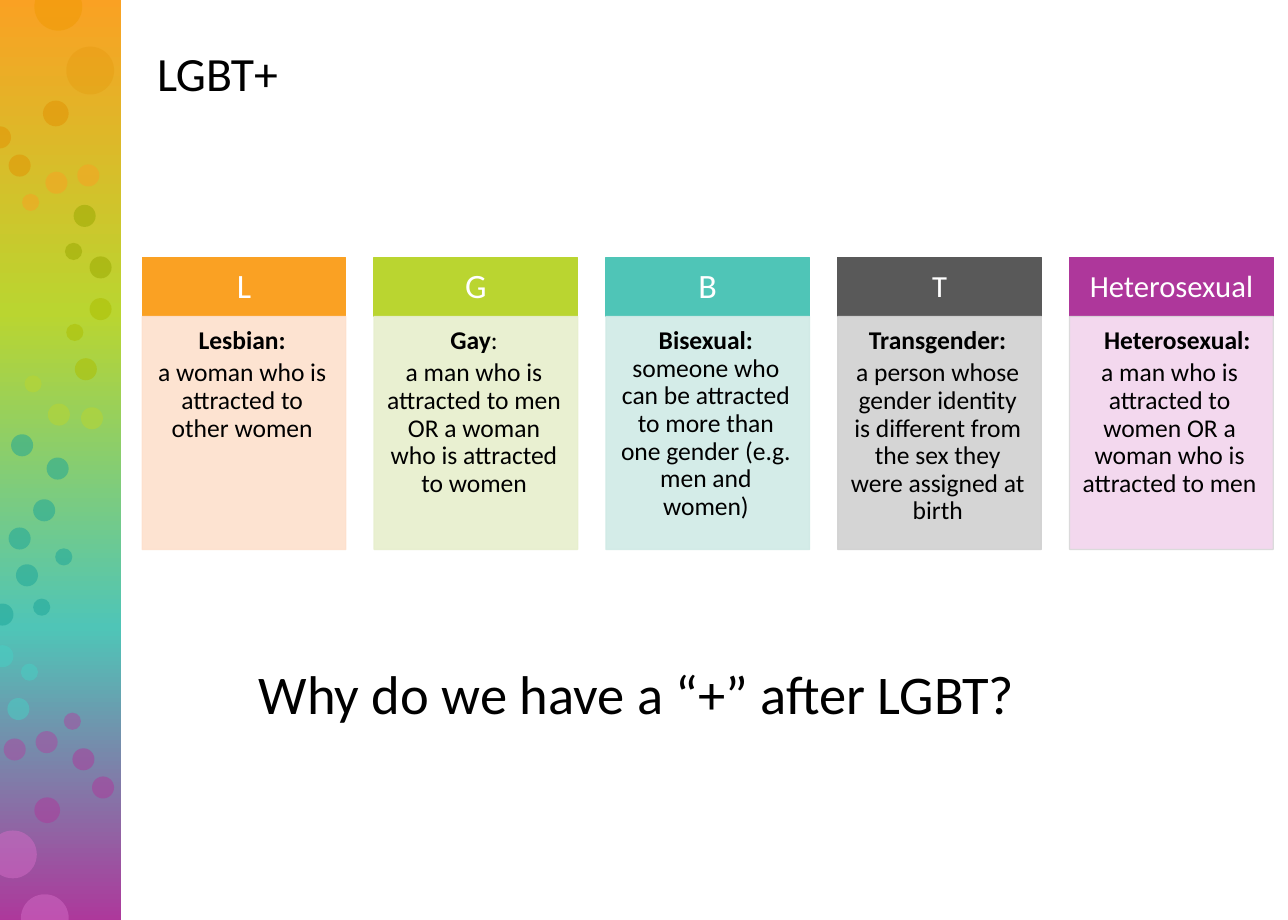
from copy import deepcopy

from lxml.etree import SubElement
from pptx import Presentation
from pptx.dml.color import RGBColor
from pptx.enum.shapes import MSO_SHAPE
from pptx.enum.text import MSO_ANCHOR, PP_ALIGN
from pptx.oxml.ns import qn
from pptx.util import Pt

BLACK = RGBColor(0x00, 0x00, 0x00)
WHITE = RGBColor(0xFF, 0xFF, 0xFF)
ORANGE = RGBColor(0xFA, 0xA1, 0x23)
AMBER = RGBColor(0xEF, 0x9A, 0x02)
OCHRE = RGBColor(0xE2, 0x91, 0x02)
LIME = RGBColor(0xBA, 0xD5, 0x30)
OLIVE = RGBColor(0x97, 0xA7, 0x00)
MOSS = RGBColor(0xAC, 0xBD, 0x00)
TEAL = RGBColor(0x4F, 0xC5, 0xB7)
PINE = RGBColor(0x1B, 0xA4, 0x98)
AQUA = RGBColor(0x47, 0xD0, 0xC4)
GREY = RGBColor(0x59, 0x59, 0x59)
PURPLE = RGBColor(0xAE, 0x37, 0x9B)
PLUM = RGBColor(0xAC, 0x46, 0xA0)
PINK = RGBColor(0xD2, 0x6C, 0xC6)
PEACH = RGBColor(0xFD, 0xE0, 0xCD)
PALE_LIME = RGBColor(0xE7, 0xEF, 0xCD)
PALE_TEAL = RGBColor(0xD0, 0xEA, 0xE6)
PALE_GREY = RGBColor(0xD1, 0xD1, 0xD1)
PALE_PINK = RGBColor(0xF2, 0xD4, 0xED)
EDGE = RGBColor(0xD8, 0xD8, 0xD8)

BAND = [(0, ORANGE), (0.34, LIME), (0.68, TEAL), (1, PURPLE)]

DOTS = [
    (AMBER, 50, [(28, -14, 39)]),
    (OCHRE, 25, [(54, 38, 39)]),
    (OCHRE, 50, [(35, 82, 21), (-9, 103, 18), (7, 126, 18)]),
    (ORANGE, 50, [(37, 140, 18), (63, 134, 18), (18, 158, 14)]),
    (OLIVE, 50, [(60, 167, 18), (73, 209, 18), (53, 198, 14)]),
    (MOSS, 50, [(54, 264, 14), (73, 243, 18), (61, 292, 18)]),
    (LIME, 50, [(66, 332, 18), (20, 306, 14), (39, 329, 18)]),
    (PINE, 50, [(9, 354, 18), (38, 373, 18), (27, 407, 18), (45, 447, 14),
                (7, 430, 18), (13, 460, 18), (-7, 492, 18), (27, 488, 14)]),
    (AQUA, 50, [(17, 541, 14), (-7, 526, 18), (6, 569, 18)]),
    (PLUM, 50, [(52, 581, 14), (3, 602, 18), (29, 596, 18)]),
    (PURPLE, 50, [(59, 610, 18), (75, 633, 18), (28, 650, 21)]),
    (PINK, 50, [(-9, 677, 39), (17, 729, 39)]),
]

CARDS = [
    ("L", 20, ORANGE, PEACH, PEACH,
     [["Lesbian:"], ["a woman who is attracted to other women"]]),
    ("G", 20, LIME, PALE_LIME, PALE_LIME,
     [["Gay", ":"],
      ["a man who is attracted to men OR a woman who is attracted to women"]]),
    ("B", 20, TEAL, PALE_TEAL, PALE_TEAL,
     [["Bisexual: ", "someone who can be attracted to more than one gender "
       "(e.g. men and women)"]]),
    ("T", 18, GREY, PALE_GREY, PALE_GREY,
     [["Transgender:"], ["a person whose gender identity is different from "
                         "the sex they were assigned at birth"]]),
    ("Heterosexual", 18, PURPLE, PALE_PINK, EDGE,
     [["Heterosexual:"],
      ["a man who is attracted to women OR a woman who is attracted to men"]]),
]


class Deck:
    """Holds the style and the current slide, and draws each kind of element."""

    font = "Calibri"
    scale = 9144

    def __init__(self, wide, high):
        self.show = Presentation()
        self.show.slide_width = self.px(wide)
        self.show.slide_height = self.px(high)
        self.slide = self.show.slides.add_slide(self.show.slide_layouts[6])

    def px(self, size):
        return size * self.scale

    def shape(self, kind, box, fill=None, edge=None, alpha=100):
        item = self.slide.shapes.add_shape(kind, *map(self.px, box))
        item.shadow.inherit = False
        if fill is not None:
            item.fill.solid()
            item.fill.fore_color.rgb = fill
        if edge is None:
            item.line.fill.background()
        else:
            item.line.color.rgb = edge
            item.line.width = Pt(0.75)
        if alpha < 100:
            for tint in item.element.spPr.iter(qn("a:srgbClr")):
                SubElement(tint, qn("a:alpha"), val=str(alpha * 1000))
        return item

    def band(self, box, stops):
        fill = self.shape(MSO_SHAPE.RECTANGLE, box).fill
        fill.gradient()
        fill.gradient_angle = 270
        marks = self.slide.shapes[-1].element.spPr.find(".//" + qn("a:gsLst"))
        while len(marks) < len(stops):
            marks.append(deepcopy(marks[0]))
        for stop, (place, tint) in zip(fill.gradient_stops, stops):
            stop.color.rgb = tint
            stop.position = place

    def dot(self, left, top, size, tint, alpha):
        self.shape(MSO_SHAPE.OVAL, (left, top, size, size), tint, alpha=alpha)

    def frame(self, item, pads, anchor=MSO_ANCHOR.TOP):
        text = item.text_frame
        text.word_wrap = True
        text.vertical_anchor = anchor
        (text.margin_left, text.margin_top,
         text.margin_right, text.margin_bottom) = map(self.px, pads)
        return text

    def style(self, para, size, tint=BLACK, align=PP_ALIGN.CENTER, space=0.9):
        para.alignment = align
        para.line_spacing = space
        for run in para.runs:
            run.font.name = self.font
            run.font.size = Pt(size)
            run.font.color.rgb = tint

    def label(self, box, words, size, space):
        item = self.slide.shapes.add_textbox(*map(self.px, box))
        text = self.frame(item, (0, 0, 0, 0))
        text.text = words
        self.style(text.paragraphs[0], size, align=PP_ALIGN.LEFT, space=space)

    def head(self, box, words, size, tint):
        item = self.shape(MSO_SHAPE.RECTANGLE, box, tint, tint)
        text = self.frame(item, (14, 8, 14, 8), MSO_ANCHOR.MIDDLE)
        text.text = words
        self.style(text.paragraphs[0], size, WHITE)

    def body(self, box, lines, tint, edge):
        item = self.shape(MSO_SHAPE.RECTANGLE, box, tint, edge, 90)
        text = self.frame(item, (9, 9, 12, 13))
        for row, parts in enumerate(lines):
            para = text.add_paragraph() if row else text.paragraphs[0]
            for part in parts:
                para.add_run().text = part
            self.style(para, 15)
            para.space_after = Pt(2.7)
        first = text.paragraphs[0]
        first.runs[0].font.bold = True
        return first

    def indent(self, para, size):
        para.alignment = PP_ALIGN.LEFT
        para._p.get_or_add_pPr().set("marL", str(self.px(size)))


def main():
    deck = Deck(1050, 750)
    deck.band((-2, -2, 101, 755), BAND)
    for tint, alpha, spots in DOTS:
        for spot in spots:
            deck.dot(*spot, tint, alpha)
    deck.label((128, 42, 872, 83), "LGBT+", 28, 0.88)
    for col, (name, size, tint, pale, edge, lines) in enumerate(CARDS):
        left = 116 + 189 * col
        deck.head((left, 210, 166, 48), name, size, tint)
        first = deck.body((left, 258, 166, 190), lines, pale, edge)
    deck.indent(first, 19)
    deck.label((211, 538, 789, 54), "Why do we have a “+” after LGBT?", 32, 1.0)
    deck.show.save("out.pptx")


if __name__ == "__main__":
    main()
